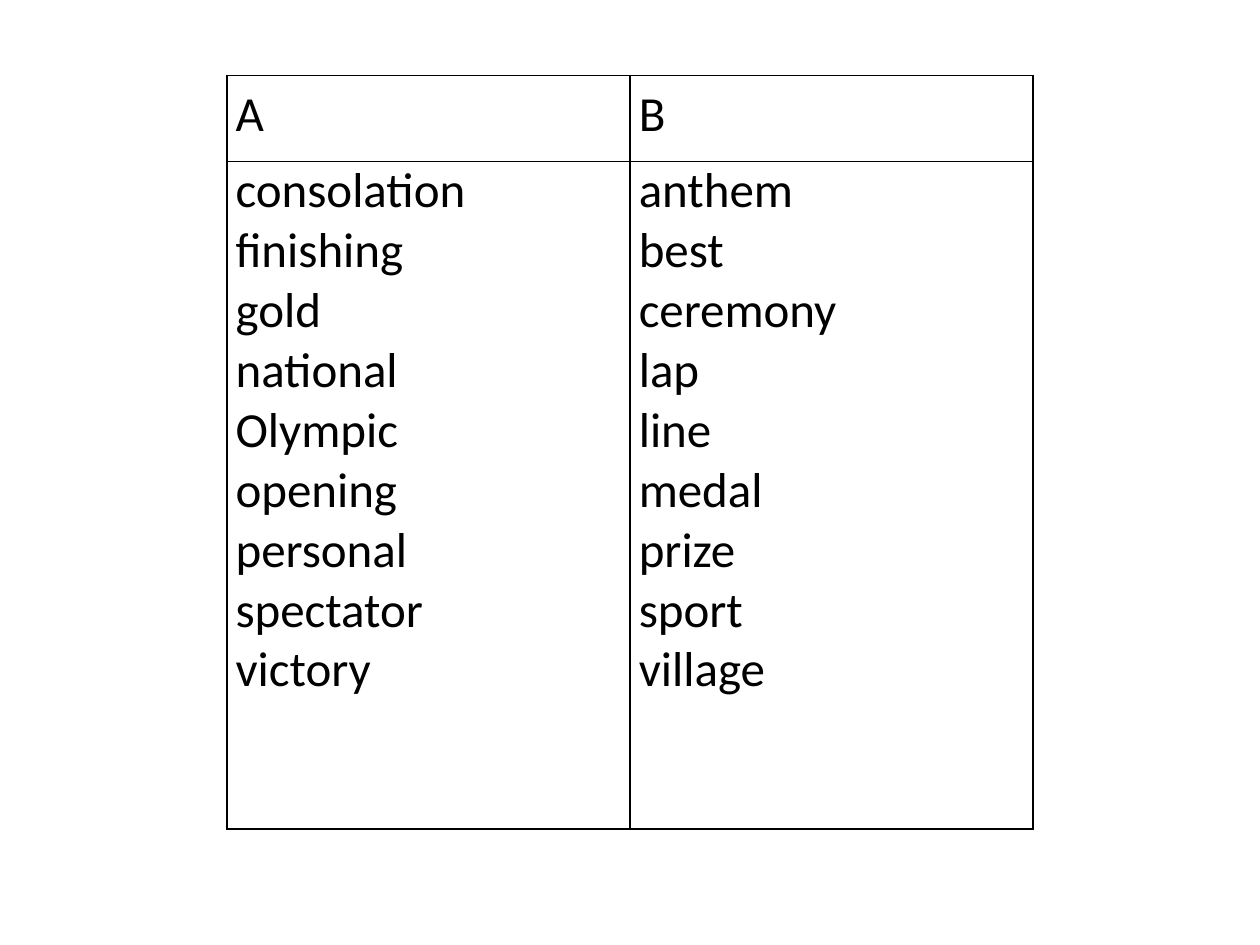
from lxml.etree import SubElement
from pptx import Presentation
from pptx.dml.color import RGBColor
from pptx.oxml.ns import qn
from pptx.util import Inches, Pt

BLACK = "000000"
HEADERS = ["A", "B"]
WORDS = [
    ["consolation", "finishing", "gold", "national", "Olympic",
     "opening", "personal", "spectator", "victory"],
    ["anthem", "best", "ceremony", "lap", "line",
     "medal", "prize", "sport", "village"],
]


def rgb(color):
    return RGBColor.from_string(color)


def set_borders(cell, color, width):
    tcPr = cell._tc.get_or_add_tcPr()
    for side in ("a:lnL", "a:lnR", "a:lnT", "a:lnB"):
        ln = SubElement(tcPr, qn(side), w=str(Pt(width)))
        fill = SubElement(ln, qn("a:solidFill"))
        SubElement(fill, qn("a:srgbClr"), val=color)


def fill_cell(cell, lines, spacing=1.0):
    """Write the lines as one paragraph with line breaks."""
    cell.margin_left = cell.margin_right = Inches(0.07)
    cell.margin_top = cell.margin_bottom = 0
    set_borders(cell, BLACK, 1)
    cell.fill.background()
    p = cell.text_frame.paragraphs[0]
    p.line_spacing = spacing
    p.font.size = Pt(28)
    for i, line in enumerate(lines):
        if i:
            p.add_line_break()
        r = p.add_run()
        r.text = line
        r.font.name = "Calibri"
        r.font.size = Pt(28)
        r.font.color.rgb = rgb(BLACK)
    for br in p._p.findall(qn("a:br")):
        SubElement(br, qn("a:rPr"), sz="2800")


def add_word_table(s):
    frame = s.shapes.add_table(2, 2, Inches(1.8), Inches(0.6),
                               Inches(6.4), Inches(5.98))
    table = frame.table
    table.first_row = table.horz_banding = False
    table.rows[0].height = Inches(0.68)
    table.rows[1].height = Inches(5.3)
    for col, (header, words) in enumerate(zip(HEADERS, WORDS)):
        table.columns[col].width = Inches(3.2)
        fill_cell(table.cell(0, col), [header], spacing=1.15)
        fill_cell(table.cell(1, col), words)


def main():
    prs = Presentation()
    prs.slide_width, prs.slide_height = Inches(10), Inches(7.5)
    s = prs.slides.add_slide(prs.slide_layouts[6])
    add_word_table(s)
    prs.save("out.pptx")


if __name__ == "__main__":
    main()
